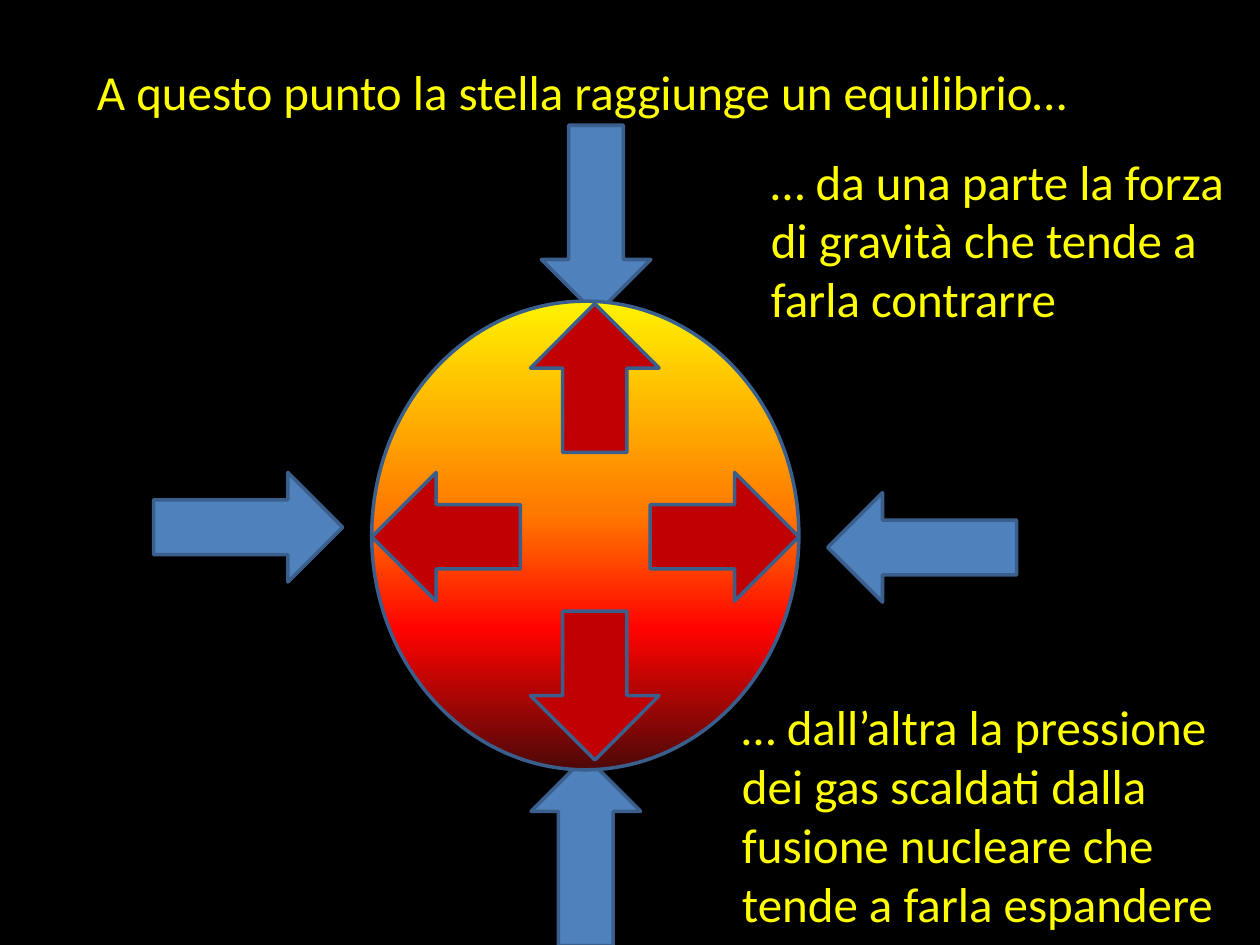
from copy import deepcopy
from dataclasses import dataclass

from pptx import Presentation
from pptx.dml.color import RGBColor
from pptx.enum.shapes import MSO_SHAPE as Shape
from pptx.enum.text import MSO_ANCHOR as Anchor, MSO_AUTO_SIZE as Fit, PP_ALIGN as Align
from pptx.util import Pt

YELLOW, BLUE, RED, EDGE = "FFFF00", "4F81BD", "C00000", "3A5F8C"
STAR_STOPS = [(0, "FFF200"), (45, "FF7A00"), (70, "FF0300"), (100, "4D0808")]


@dataclass
class Box:
    left: float
    top: float
    width: float
    height: float

    def lengths(self) -> list:
        return [Pt(v) for v in (self.left, self.top, self.width, self.height)]


@dataclass
class Arrow:
    left: float
    top: float
    turn: int


@dataclass
class Force:
    """Four equal arrows of one colour."""
    width: float
    height: float
    fill: str
    arrows: list[Arrow]


GRAVITY = Force(108, 62.6, BLUE, [
    Arrow(87.8, 270, 0), Arrow(280.8, 455, 270),
    Arrow(473, 281.5, 180), Arrow(286.6, 94.3, 90)])
PRESSURE = Force(85, 73.5, RED, [
    Arrow(371.5, 270, 0), Arrow(212.4, 270, 180),
    Arrow(297.4, 179.3, 270), Arrow(297.4, 355, 90)])
STAR = Box(212.4, 172.1, 244.1, 267.8)


def paint(color, code: str) -> None:
    color.rgb = RGBColor.from_string(code)


def outline(shape) -> None:
    shape.shadow.inherit = False
    paint(shape.line.color, EDGE)
    shape.line.width = Pt(2)


def write(shape, box: Box, text: str) -> None:
    shape.left, shape.top, shape.width, shape.height = box.lengths()
    frame = shape.text_frame
    frame.text = text
    frame.word_wrap = True
    frame.auto_size = Fit.SHAPE_TO_FIT_TEXT
    frame.vertical_anchor = Anchor.TOP
    par = frame.paragraphs[0]
    par.alignment = Align.LEFT
    par.font.name = "Calibri"
    par.font.size = Pt(28)
    paint(par.font.color, YELLOW)


def add_note(slide, box: Box, text: str) -> None:
    write(slide.shapes.add_textbox(*box.lengths()), box, text)


def add_force(slide, force: Force) -> None:
    group = slide.shapes.add_group_shape()
    for arrow in force.arrows:
        box = Box(arrow.left, arrow.top, force.width, force.height)
        shape = group.shapes.add_shape(Shape.RIGHT_ARROW, *box.lengths())
        shape.rotation = arrow.turn
        shape.fill.solid()
        paint(shape.fill.fore_color, force.fill)
        outline(shape)


def add_star(slide) -> None:
    star = slide.shapes.add_shape(Shape.OVAL, *STAR.lengths())
    outline(star)
    fill = star.fill
    fill.gradient()
    fill.gradient_angle = 270
    # The default gradient has two stops: grow the list to four
    stops = star.element.spPr.find(".//{*}gsLst")
    while len(stops) < len(STAR_STOPS):
        stops.append(deepcopy(stops[0]))
    for stop, (place, code) in zip(fill.gradient_stops, STAR_STOPS):
        stop.position = place / 100
        paint(stop.color, code)


def main() -> None:
    deck = Presentation()
    deck.slide_width, deck.slide_height = Pt(720), Pt(540)
    slide = deck.slides.add_slide(deck.slide_layouts[5])
    back = slide.background.fill
    back.solid()
    paint(back.fore_color, "000000")

    write(slide.shapes.title, Box(48.2, 31.7, 601.2, 41),
          "A questo punto la stella raggiunge un equilibrio…")
    add_force(slide, GRAVITY)
    add_note(slide, Box(433.4, 82.8, 286.6, 108.7),
             "… da una parte la forza di gravità che tende a farla contrarre")
    add_star(slide)
    add_force(slide, PRESSURE)
    add_note(slide, Box(416.9, 394.6, 286.6, 143.3),
             "… dall’altra la pressione dei gas scaldati dalla fusione nucleare "
             "che tende a farla espandere")
    deck.save("out.pptx")


if __name__ == "__main__":
    main()
